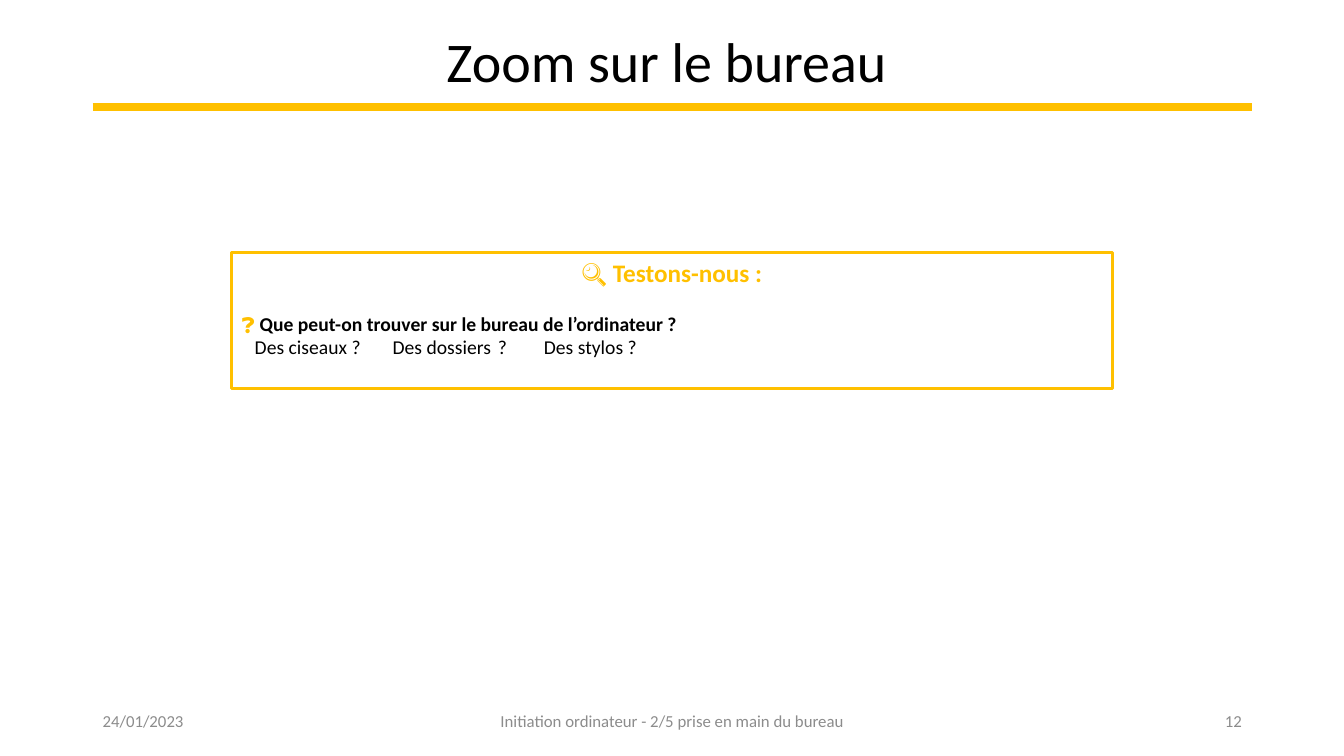
from lxml.etree import SubElement
from pptx import Presentation
from pptx.dml.color import RGBColor
from pptx.enum.shapes import MSO_CONNECTOR, MSO_SHAPE
from pptx.enum.text import MSO_ANCHOR, MSO_AUTO_SIZE, PP_ALIGN
from pptx.oxml.ns import qn
from pptx.util import Pt

COLORS = {"black": "000000", "gold": "FFC000", "grey": "8C8C8C"}


def rgb(name):
    return RGBColor.from_string(COLORS[name])


def add_run(paragraph, text, size, color, bold=False):
    run = paragraph.add_run()
    run.text = text
    run.font.color.rgb = rgb(color)
    font_format = {"name": "Calibri", "size": Pt(size), "bold": bold}
    for key, value in font_format.items():
        setattr(run.font, key, value)


deck = Presentation()
deck.slide_width, deck.slide_height = Pt(960), Pt(540)
slide = deck.slides.add_slide(deck.slide_layouts[5])

heading = slide.shapes.title
heading_place = {"left": Pt(62), "top": Pt(-6.5), "width": Pt(828), "height": Pt(104.4)}
for key, value in heading_place.items():
    setattr(heading, key, value)
heading.text_frame.auto_size = MSO_AUTO_SIZE.NONE
heading.text_frame.vertical_anchor = MSO_ANCHOR.MIDDLE
heading_line = heading.text_frame.paragraphs[0]
heading_line.alignment = PP_ALIGN.CENTER
heading_line.line_spacing = 0.9
add_run(heading_line, "Zoom sur le bureau", 40, "black")

rule = slide.shapes.add_connector(
    MSO_CONNECTOR.STRAIGHT, Pt(66.2), Pt(76.4), Pt(894.2), Pt(76.4))
rule.line.color.rgb = rgb("gold")
rule.line.width = Pt(6)
SubElement(rule._element.spPr, qn("a:effectLst"))

quiz = slide.shapes.add_shape(
    MSO_SHAPE.RECTANGLE, Pt(165.4), Pt(180.6), Pt(629.3), Pt(97))
quiz.shadow.inherit = False
quiz.fill.background()
quiz.line.color.rgb = rgb("gold")
quiz.line.width = Pt(2.25)
quiz_format = {"word_wrap": True, "auto_size": MSO_AUTO_SIZE.NONE,
               "vertical_anchor": MSO_ANCHOR.TOP}
for key, value in quiz_format.items():
    setattr(quiz.text_frame, key, value)

invitation = quiz.text_frame.paragraphs[0]
invitation.alignment = PP_ALIGN.CENTER
add_run(invitation, "🔍 Testons-nous :", 18, "gold", True)

question = quiz.text_frame.add_paragraph()
question.alignment = PP_ALIGN.LEFT
question.space_before = Pt(17)
add_run(question, "❓ ", 14, "gold", True)
add_run(question, "Que peut-on trouver sur le bureau de l’ordinateur ?", 14, "black", True)

choices = quiz.text_frame.add_paragraph()
choices.alignment = PP_ALIGN.LEFT
choice_props = choices._p.get_or_add_pPr()
choice_props.set("marL", "0")
choice_props.set("indent", str(Pt(9.5)))
tab_stops = SubElement(choice_props, qn("a:tabLst"))
for stop in (144, 216, 288):
    SubElement(tab_stops, qn("a:tab"), pos=str(Pt(stop)), algn="l")
add_run(choices, "Des ciseaux ?\tDes dossiers\t ?\tDes stylos ?", 14, "black")

footers = [
    ("24/01/2023", 66.2, 216, PP_ALIGN.LEFT),
    ("Initiation ordinateur - 2/5 prise en main du bureau", 318.2, 324, PP_ALIGN.CENTER),
    ("12", 678.2, 216, PP_ALIGN.RIGHT),
]
for text, left, width, alignment in footers:
    footer = slide.shapes.add_textbox(Pt(left), Pt(500.5), Pt(width), Pt(28.8))
    footer.text_frame.word_wrap = True
    footer.text_frame.vertical_anchor = MSO_ANCHOR.MIDDLE
    footer_line = footer.text_frame.paragraphs[0]
    footer_line.alignment = alignment
    add_run(footer_line, text, 12, "grey")

deck.save("out.pptx")
